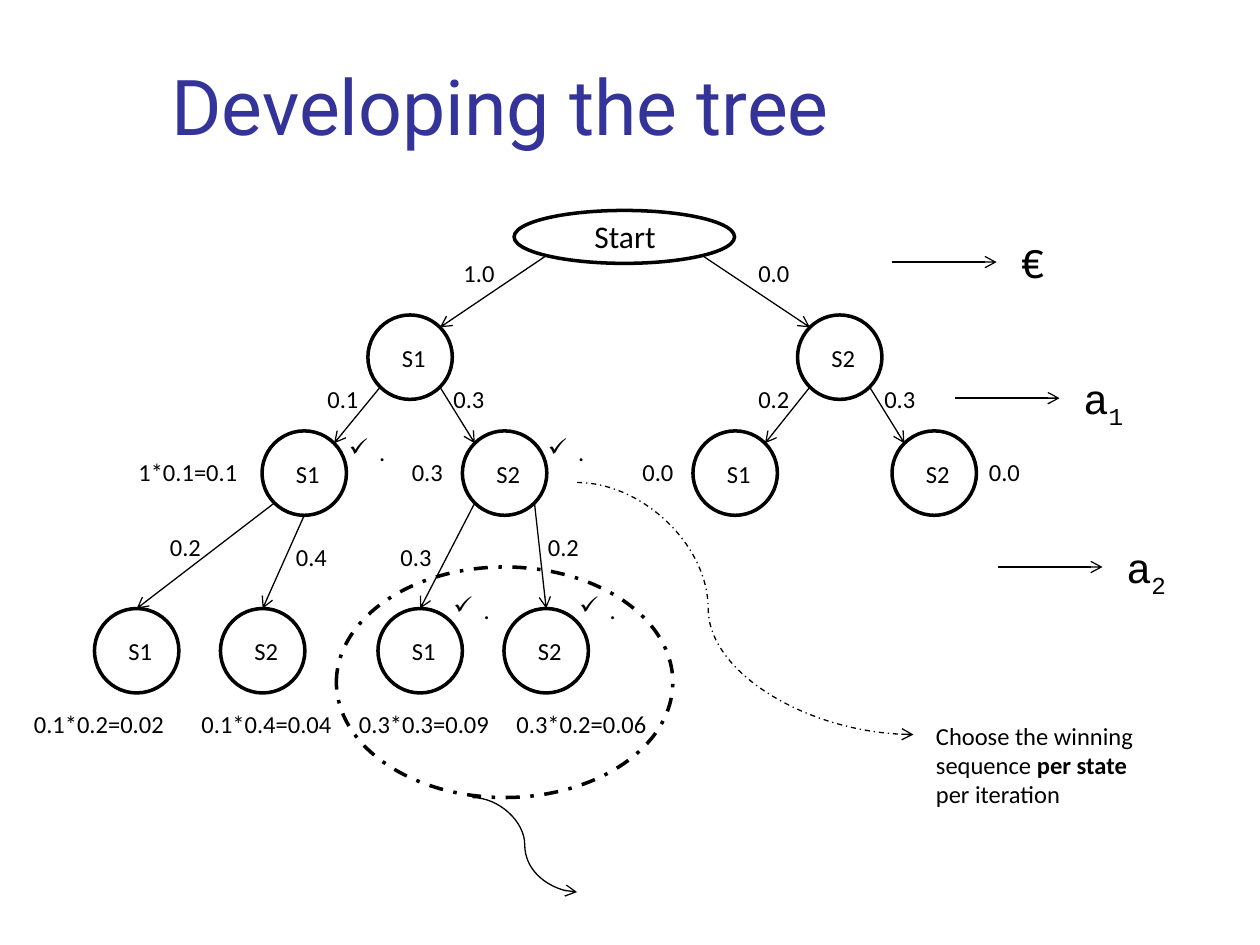
from dataclasses import dataclass
from math import cos, radians, sin

from lxml import etree
from pptx import Presentation
from pptx.dml.color import RGBColor
from pptx.enum.dml import MSO_LINE
from pptx.enum.shapes import MSO_CONNECTOR, MSO_SHAPE
from pptx.enum.text import MSO_ANCHOR, MSO_AUTO_SIZE, PP_ALIGN
from pptx.oxml.ns import qn
from pptx.util import Inches, Pt

STRAIGHT, CURVE = MSO_CONNECTOR.STRAIGHT, MSO_CONNECTOR.CURVE
ELLIPSE = MSO_SHAPE.OVAL
DASH_DOT = MSO_LINE.DASH_DOT
LEFT, CENTER = PP_ALIGN.LEFT, PP_ALIGN.CENTER
BLACK, WHITE, INDIGO = "000000", "FFFFFF", "333399"
RIGHT_DOWN, DOWN, LEFT_DOWN = 45, 90, 135
LEFT_UP, UP, RIGHT_UP = 225, 270, 315
STATE_SIZE = 0.67
LABEL_HEIGHT = 0.34


@dataclass
class Node:
    left: float
    top: float
    width: float = STATE_SIZE
    height: float = STATE_SIZE

    def rim(self, degrees: float) -> tuple[float, float]:
        """Point on the outline, with angles running clockwise from the right."""
        turn = radians(degrees)
        return (self.left + self.width / 2 * (1 + cos(turn)),
                self.top + self.height / 2 * (1 + sin(turn)))


@dataclass
class Label:
    text: str
    left: float
    top: float
    width: float = 0.5


@dataclass
class Span:
    text: str
    bold: bool = False
    subscript: bool = False


@dataclass
class Observation:
    symbol: str
    index: str
    left: float
    top: float


# Each key spells the state sequence that leads from the start to the node.
TREE = {
    "": Node(4.08, 1.67, 1.75, 0.42),
    "1": Node(2.92, 2.5), "2": Node(6.33, 2.5),
    "11": Node(2.08, 3.42), "12": Node(3.67, 3.42),
    "21": Node(5.5, 3.42), "22": Node(7.08, 3.42),
    "111": Node(0.75, 4.83), "112": Node(1.75, 4.83),
    "121": Node(3, 4.83), "122": Node(4, 4.83),
}
PROBABILITIES = [
    Label("1.0", 3.58, 2), Label("0.0", 5.92, 2),
    Label("0.1", 2.5, 3), Label("0.3", 3.5, 3),
    Label("0.2", 5.92, 3), Label("0.3", 6.92, 3),
    Label("0.2", 1.25, 4.17), Label("0.4", 2.25, 4.25),
    Label("0.3", 3.08, 4.25), Label("0.2", 4.25, 4.17),
]
SCORES = [
    Label("1*0.1=0.1", 1, 3.58, 1), Label("0.3", 3.17, 3.58),
    Label("0.0", 5, 3.58), Label("0.0", 7.75, 3.58),
    Label("0.1*0.2=0.02", 0.17, 5.58, 1.25),
    Label("0.1*0.4=0.04", 1.5, 5.58, 1.25),
    Label("0.3*0.3=0.09", 2.75, 5.58, 1.25),
    Label("0.3*0.2=0.06", 4, 5.58, 1.25),
]
WINNER_MARKS = [(2.67, 3.42), (4.25, 3.42), (3.5, 4.67), (4.5, 4.67)]
OBSERVATIONS = [
    Observation("€", "", 7.08, 2.08),
    Observation("a", "1", 7.58, 3.16),
    Observation("a", "2", 7.92, 4.5),
]


def color(value: str) -> RGBColor:
    return RGBColor.from_string(value)


def add_ellipse(shapes, node: Node, dash=None) -> None:
    oval = shapes.add_shape(ELLIPSE, Inches(node.left), Inches(node.top),
                            Inches(node.width), Inches(node.height))
    oval.shadow.inherit = False
    oval.fill.solid()
    oval.fill.fore_color.rgb = color(WHITE)
    oval.line.color.rgb = color(BLACK)
    oval.line.width = Pt(2)
    if dash is not None:
        oval.line.dash_style = dash


def add_text(shapes, spans: list[Span], left: float, top: float, width: float,
             height: float = LABEL_HEIGHT, size: float = 14,
             font: str = "Calibri", align=LEFT):
    """Add a one-paragraph text box and return its paragraph."""
    box = shapes.add_textbox(Inches(left), Inches(top), Inches(width), Inches(height))
    frame = box.text_frame
    frame.word_wrap = True
    frame.auto_size = MSO_AUTO_SIZE.SHAPE_TO_FIT_TEXT
    para = frame.paragraphs[0]
    para.alignment = align
    for span in spans:
        run = para.add_run()
        run.text = span.text
        run.font.name = font
        run.font.size = Pt(size)
        run.font.bold = span.bold
        run.font.color.rgb = color(BLACK)
        if span.subscript:
            run._r.get_or_add_rPr().set("baseline", "-25000")
    return para


def add_arrow(shapes, start: tuple[float, float], end: tuple[float, float],
              kind=STRAIGHT, dash=None, bend: float = 0.5) -> None:
    """Add an arrow; bend is the share of its width where a curve turns."""
    arrow = shapes.add_connector(kind, *(Inches(value) for value in (*start, *end)))
    arrow.line.color.rgb = color(BLACK)
    arrow.line.width = Pt(0.75)
    if dash is not None:
        arrow.line.dash_style = dash
    properties = arrow._element.spPr
    etree.SubElement(properties.find(qn("a:ln")), qn("a:tailEnd"), type="arrow")
    etree.SubElement(properties, qn("a:effectLst"))
    if kind == CURVE:
        guides = properties.find(qn("a:prstGeom")).get_or_add_avLst()
        etree.SubElement(guides, qn("a:gd"), name="adj1",
                         fmla=f"val {round(bend * 100000)}")


def add_node(shapes, key: str, node: Node) -> None:
    group = shapes.add_group_shape().shapes
    add_ellipse(group, node)
    if key:
        add_text(group, [Span("S" + key[-1])], node.left + 0.17, node.top + 0.17, 0.42)
    else:
        add_text(group, [Span("Start")], 4.42, node.top, 1.08, 0.4, 18, align=CENTER)


def add_edge(shapes, key: str) -> None:
    """Add the arrow from the parent of a node to the node."""
    leave, arrive = (LEFT_DOWN, RIGHT_UP) if key[-1] == "1" else (RIGHT_DOWN, LEFT_UP)
    if len(key) == 3:
        arrive = UP
    if key == "112":
        leave = DOWN
    add_arrow(shapes, TREE[key[:-1]].rim(leave), TREE[key].rim(arrive))


def add_winner_mark(shapes, left: float, top: float) -> None:
    para = add_text(shapes, [Span(".")], left, top, 0.5)
    properties = para._p.get_or_add_pPr()
    properties.set("marL", str(Inches(0.24)))
    properties.set("indent", str(-Inches(0.24)))
    etree.SubElement(properties, qn("a:buChar"), char="✓")


def add_observation(shapes, item: Observation) -> None:
    group = shapes.add_group_shape().shapes
    add_arrow(group, (item.left, item.top), (item.left + 0.83, item.top))
    spans = [Span(item.symbol)]
    if item.index:
        spans.append(Span(item.index, subscript=True))
    add_text(group, spans, item.left + 0.92, item.top - 0.25, 1.08, 0.51, 24, "Courier New")


def add_title(slide, text: str) -> None:
    title = slide.shapes.title
    title.left, title.top = Inches(1.26), Inches(0.23)
    title.width, title.height = Inches(8.52), Inches(1.02)
    title.text_frame.vertical_anchor = MSO_ANCHOR.BOTTOM
    para = title.text_frame.paragraphs[0]
    para.alignment = LEFT
    run = para.add_run()
    run.text = text
    run.font.name = "Roboto"
    run.font.size = Pt(44)
    run.font.color.rgb = color(INDIGO)


def main() -> None:
    deck = Presentation()
    deck.slide_width, deck.slide_height = Inches(10), Inches(7.5)
    slide = deck.slides.add_slide(deck.slide_layouts[5])
    shapes = slide.shapes
    add_title(slide, "Developing the tree")
    add_ellipse(shapes, Node(2.67, 4.5, 2.67, 1.83), DASH_DOT)
    for key, node in TREE.items():
        add_node(shapes, key, node)
    for key in filter(None, TREE):
        add_edge(shapes, key)
    for label in PROBABILITIES + SCORES:
        add_text(shapes, [Span(label.text)], label.left, label.top, label.width)
    for left, top in WINNER_MARKS:
        add_winner_mark(shapes, left, top)
    for item in OBSERVATIONS:
        add_observation(shapes, item)
    advice = [Span("Choose the winning sequence "), Span("per state", bold=True),
              Span(" per iteration")]
    add_text(shapes, advice, 7.33, 5.67, 2, 0.81)
    add_arrow(shapes, (3.75, 6.33), (4.58, 7.08), CURVE)
    add_arrow(shapes, (4.58, 3.83), (7.25, 5.83), CURVE, DASH_DOT, 0.39)
    deck.save("out.pptx")


if __name__ == "__main__":
    main()
